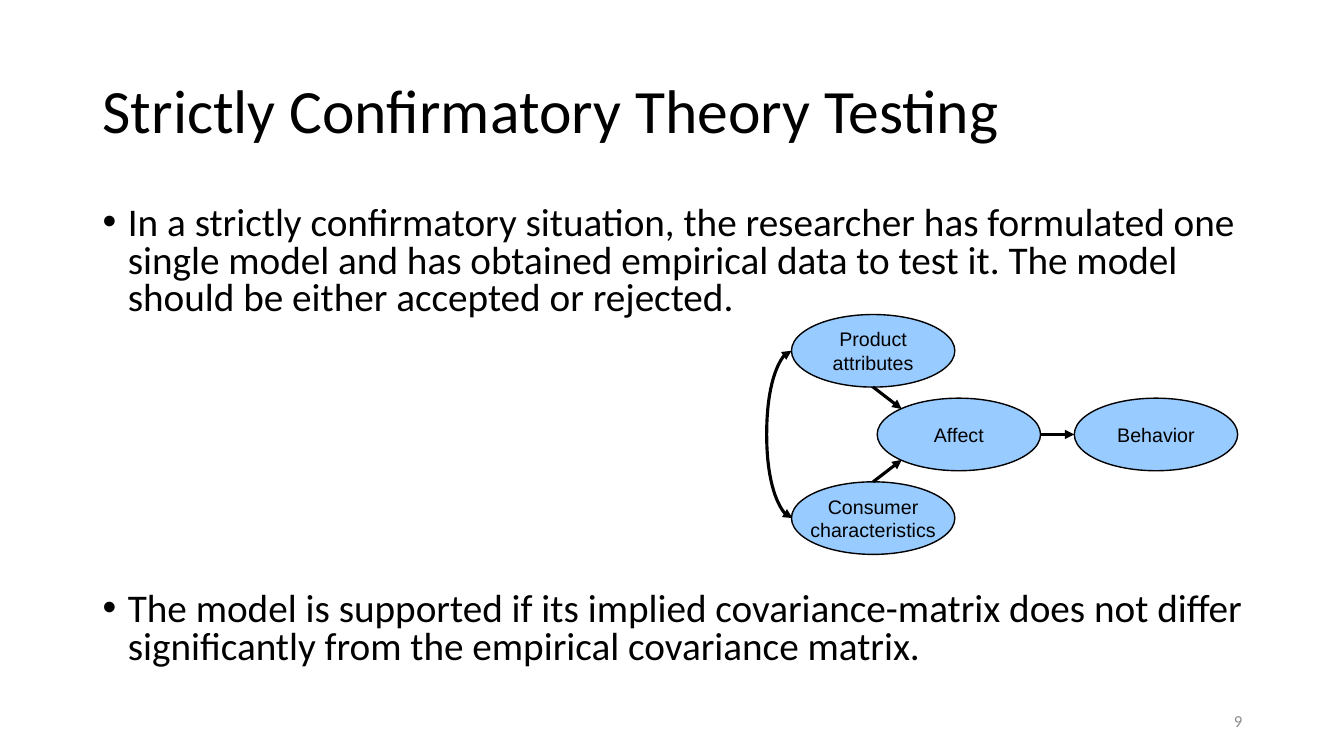
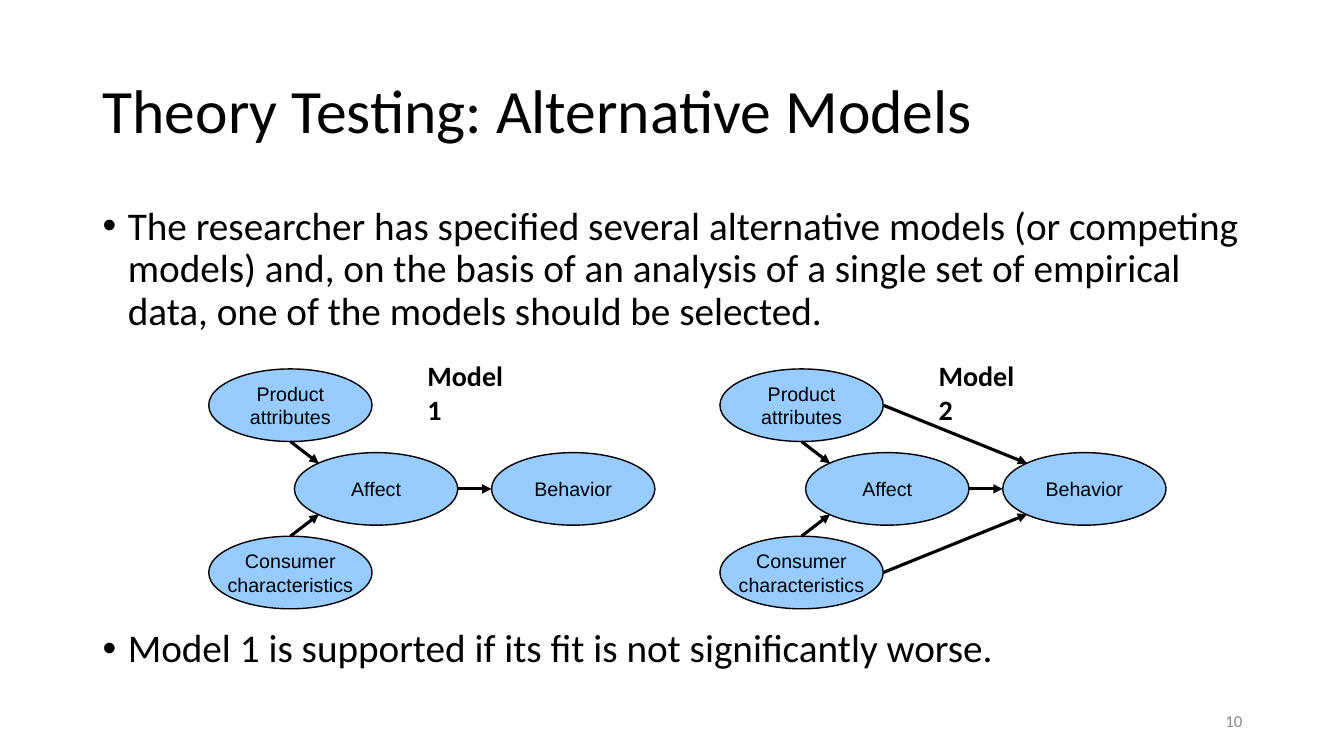
from lxml.etree import SubElement
from pptx import Presentation
from pptx.dml.color import RGBColor
from pptx.enum.shapes import MSO_CONNECTOR, MSO_SHAPE
from pptx.enum.text import MSO_ANCHOR, PP_ALIGN
from pptx.oxml.ns import qn
from pptx.util import Inches, Pt

LINE, CURVE = MSO_CONNECTOR.STRAIGHT, MSO_CONNECTOR.CURVE
OVAL = MSO_SHAPE.OVAL
MID, TOP = MSO_ANCHOR.MIDDLE, MSO_ANCHOR.TOP
LEFT, RIGHT, MIDST = PP_ALIGN.LEFT, PP_ALIGN.RIGHT, PP_ALIGN.CENTER

COLORS = {"ink": "000000", "node": "3399FF", "page": "8C8C8C"}
WIDE, HIGH = 13.33, 7.5
EDGE, SPAN = 0.92, 11.5
COL, ROW = 0.85, 0.83
NODE_W, NODE_H = 1.62, 0.72
BOW, SLIT = 0.25, 0.01

NODES = {
    "behave": ("Behavior", 3.3, 1),
    "affect": ("Affect", 1, 1),
    "product": ("Product\nattributes", 0, 0),
    "consumer": ("Consumer\ncharacteristics", 0, 2),
}
SITES = {
    "top": (0.5, 0), "low": (0.5, 1), "left": (0, 0.5), "right": (1, 0.5),
    "upleft": (0.15, 0.15), "lowleft": (0.15, 0.85),
}
PATHS = [
    ("product", "low", "affect", "upleft"),
    ("consumer", "top", "affect", "lowleft"),
    ("affect", "right", "behave", "left"),
]
DIRECT = [
    ("consumer", "right", "behave", "lowleft"),
    ("product", "right", "behave", "upleft"),
]


def rgb(name):
    """Look up a named colour."""
    return RGBColor.from_string(COLORS[name])


def style(para, size, font="Calibri", color="ink", bold=False, align=LEFT):
    """Format a paragraph and its runs."""
    para.alignment = align
    for run in para.runs:
        run.font.size, run.font.name, run.font.bold = Pt(size), font, bold
        run.font.color.rgb = rgb(color)


def frame(slide, x, y, wide, high, anchor=TOP):
    """Add a wrapping text box and return its text frame."""
    box = slide.shapes.add_textbox(*map(Inches, (x, y, wide, high)))
    box.text_frame.word_wrap = True
    box.text_frame.vertical_anchor = anchor
    return box.text_frame


def label(slide, text, area, size, anchor=TOP, **look):
    """Add one line of styled text and return its paragraph."""
    para = frame(slide, *area, anchor).paragraphs[0]
    para.text = text
    style(para, size, **look)
    return para


def base(deck, title, page):
    """Add a slide with its title and page number."""
    slide = deck.slides.add_slide(deck.slide_layouts[6])
    head = label(slide, title, (EDGE, 0.4, SPAN, 1.45), 44, MID)
    head.line_spacing = 0.9
    label(slide, str(page), (EDGE + SPAN - 3, 6.95, 3, 0.4), 12, MID,
          color="page", align=RIGHT)
    return slide


def points(slide, texts, lead, gap):
    """Add bullets, with a gap for the models between them."""
    text = frame(slide, EDGE, 2, SPAN, 4.76)
    text.text = "\n".join(texts)
    for num, para in enumerate(text.paragraphs):
        style(para, 28)
        para.line_spacing = lead
        para.space_before = Pt(gap if num else 10)
        props = para._p.get_or_add_pPr()
        props.set("marL", str(Inches(0.25)))
        props.set("indent", str(Inches(-0.25)))
        SubElement(props, qn("a:buFont")).set("typeface", "Arial")
        SubElement(props, qn("a:buChar")).set("char", "•")


def node(slide, text, x, y):
    """Add a half clear ellipse with a centred label."""
    oval = slide.shapes.add_shape(OVAL, *map(Inches, (x, y, NODE_W, NODE_H)))
    oval.shadow.inherit = False
    oval.fill.solid()
    oval.fill.fore_color.rgb = rgb("node")
    tint = oval.element.spPr.find(f"{qn('a:solidFill')}/{qn('a:srgbClr')}")
    SubElement(tint, qn("a:alpha")).set("val", "50000")
    oval.line.color.rgb = rgb("ink")
    oval.line.width = Pt(1)
    text_frame = oval.text_frame
    text_frame.word_wrap = False
    text_frame.vertical_anchor = MID
    para = text_frame.paragraphs[0]
    para.text = text
    style(para, 14, "Arial", align=MIDST)


def arrow(slide, start, end, kind=LINE, ends=("tailEnd",)):
    """Add a connector with the given arrowheads."""
    link = slide.shapes.add_connector(kind, *map(Inches, (*start, *end)))
    link.line.color.rgb = rgb("ink")
    link.line.width = Pt(2.25)
    props = link.element.spPr
    for name in ends:
        SubElement(props.find(qn("a:ln")), qn(f"a:{name}")).set("type", "triangle")
    SubElement(props, qn("a:effectLst"))
    return link


def site(x, y, name, side):
    """Find a point on a node of the model placed at x, y."""
    _, col, row = NODES[name]
    across, down = SITES[side]
    return x + col * COL + across * NODE_W, y + row * ROW + down * NODE_H


def model(slide, x, y, paths, name=""):
    """Draw the nodes, the paths and the name of a model."""
    for text, col, row in NODES.values():
        node(slide, text, x + col * COL, y + row * ROW)
    for first, out, last, into in paths:
        arrow(slide, site(x, y, first, out), site(x, y, last, into))
    if name:
        label(slide, name, (x + 2.07, y - 0.15, 1.05, 0.75), 20, bold=True)


def bow(slide, x, y):
    """Join the two causes with a curve that has two heads."""
    start = site(x, y, "product", "left")
    far, low = site(x, y, "consumer", "left")
    link = arrow(slide, start, (far + SLIT, low), CURVE, ("headEnd", "tailEnd"))
    form = link.element.spPr.find(qn("a:prstGeom"))
    guides = form.find(qn("a:avLst"))
    if guides is None:
        guides = SubElement(form, qn("a:avLst"))
    guide = SubElement(guides, qn("a:gd"))
    guide.set("name", "adj1")
    guide.set("fmla", f"val {round(-BOW / SLIT * 100000)}")


def main():
    """Build both slides."""
    deck = Presentation()
    deck.slide_width, deck.slide_height = Inches(WIDE), Inches(HIGH)

    slide = base(deck, "Strictly Confirmatory Theory Testing", 9)
    points(slide, [
        "In a strictly confirmatory situation, the researcher has formulated one "
        "single model and has obtained empirical data to test it. The model "
        "should be either accepted or rejected.",
        "The model is supported if its implied covariance-matrix does not differ "
        "significantly from the empirical covariance matrix.",
    ], 0.8, 195)
    model(slide, 7.85, 3.12, PATHS)
    bow(slide, 7.85, 3.12)

    slide = base(deck, "Theory Testing: Alternative Models", 10)
    points(slide, [
        "The researcher has specified several alternative models (or competing "
        "models) and, on the basis of an analysis of a single set of empirical "
        "data, one of the models should be selected.",
        "Model 1 is supported if its fit is not significantly worse.",
    ], 0.9, 211)
    model(slide, 2.07, 3.66, PATHS, "Model 1")
    model(slide, 7.14, 3.66, PATHS + DIRECT, "Model 2")

    deck.save("out.pptx")


if __name__ == "__main__":
    main()
